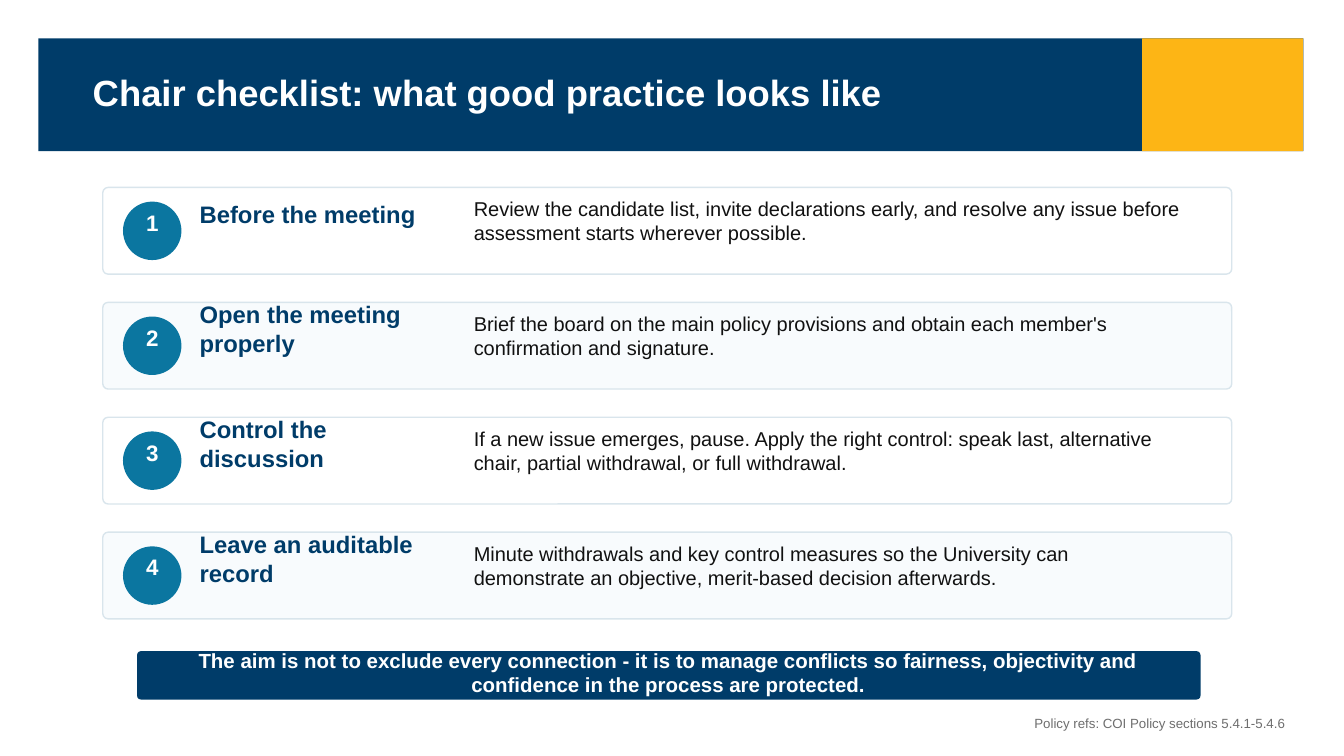
from pptx import Presentation
from pptx.dml.color import RGBColor
from pptx.enum.shapes import MSO_SHAPE
from pptx.enum.text import MSO_ANCHOR, MSO_AUTO_SIZE, PP_ALIGN
from pptx.util import Pt

NAVY = RGBColor(0x00, 0x3C, 0x69)
GOLD = RGBColor(0xFD, 0xB5, 0x15)
TEAL = RGBColor(0x0B, 0x76, 0xA0)
WHITE = RGBColor(0xFF, 0xFF, 0xFF)
PALE = RGBColor(0xF8, 0xFB, 0xFD)
BORDER = RGBColor(0xD9, 0xE5, 0xEC)
INK = RGBColor(0x11, 0x11, 0x11)
GREY = RGBColor(0x6E, 0x6E, 0x6E)

FIRST_ROW_TOP = 133.92
ROW_PITCH = 82.08

STEPS = [
    ("Before the meeting",
     "Review the candidate list, invite declarations early, and resolve any issue "
     "before assessment starts wherever possible."),
    ("Open the meeting properly",
     "Brief the board on the main policy provisions and obtain each member's "
     "confirmation and signature."),
    ("Control the discussion",
     "If a new issue emerges, pause. Apply the right control: speak last, alternative "
     "chair, partial withdrawal, or full withdrawal."),
    ("Leave an auditable record",
     "Minute withdrawals and key control measures so the University can demonstrate "
     "an objective, merit-based decision afterwards."),
]


class ChecklistSlide:
    font_name = "Arial"

    def __init__(self, slide):
        self.slide = slide

    def panel(self, kind, left, top, width, height, fill, border=None, corner=None):
        panel = self.slide.shapes.add_shape(
            kind, Pt(left), Pt(top), Pt(width), Pt(height))
        panel.shadow.inherit = False
        panel.fill.solid()
        panel.fill.fore_color.rgb = fill
        if border is None:
            panel.line.fill.background()
        else:
            panel.line.color.rgb = border
            panel.line.width = Pt(1)
        if corner is not None:
            panel.adjustments[0] = corner

    def style_text(self, frame, wording, size, color, bold, align):
        frame.word_wrap = True
        frame.auto_size = MSO_AUTO_SIZE.NONE
        frame.vertical_anchor = MSO_ANCHOR.MIDDLE
        frame.margin_left = frame.margin_right = 0
        frame.margin_top = frame.margin_bottom = 0
        frame.text = wording
        paragraph = frame.paragraphs[0]
        paragraph.alignment = align
        paragraph.font.name = self.font_name
        paragraph.font.size = Pt(size)
        paragraph.font.bold = bold
        paragraph.font.color.rgb = color

    def title(self, wording, left, top, width, height):
        title = self.slide.shapes.title
        title.left, title.top = Pt(left), Pt(top)
        title.width, title.height = Pt(width), Pt(height)
        self.style_text(title.text_frame, wording, 26, WHITE, True, PP_ALIGN.LEFT)
        title.element.getparent().append(title.element)

    def text(self, wording, left, top, width, height, size, color,
             bold=False, align=PP_ALIGN.LEFT):
        box = self.slide.shapes.add_textbox(Pt(left), Pt(top), Pt(width), Pt(height))
        self.style_text(box.text_frame, wording, size, color, bold, align)

    def step(self, number, heading, advice):
        top = FIRST_ROW_TOP + (number - 1) * ROW_PITCH
        fill = WHITE if number % 2 else PALE
        self.panel(MSO_SHAPE.ROUNDED_RECTANGLE, 73.44, top, 806.4, 61.92,
                   fill, BORDER, 0.06)
        self.panel(MSO_SHAPE.OVAL, 87.84, top + 10.08, 41.76, 41.76, TEAL)
        self.text(str(number), 87.84, top + 19.44, 41.76, 10.8, 16, WHITE,
                  True, PP_ALIGN.CENTER)
        self.text(heading, 142.56, top + 11.52, 183.6, 14.4, 17, NAVY, True)
        self.text(advice, 338.4, top + 11.52, 505.44, 24.48, 14.3, INK)


def main():
    deck = Presentation()
    deck.slide_width, deck.slide_height = Pt(960), Pt(540)
    checklist = ChecklistSlide(deck.slides.add_slide(deck.slide_layouts[5]))

    checklist.panel(MSO_SHAPE.RECTANGLE, 27.36, 27.36, 903.6, 80.64, NAVY)
    checklist.panel(MSO_SHAPE.RECTANGLE, 815.76, 27.36, 115.2, 80.64, GOLD)
    checklist.title("Chair checklist: what good practice looks like",
                    66.24, 51.84, 712.8, 27.36)
    checklist.text("Policy refs: COI Policy sections 5.4.1-5.4.6",
                   43.2, 509.76, 874.8, 12.96, 9.5, GREY, align=PP_ALIGN.RIGHT)

    for number, (heading, advice) in enumerate(STEPS, 1):
        checklist.step(number, heading, advice)

    checklist.panel(MSO_SHAPE.ROUNDED_RECTANGLE, 97.92, 465.12, 759.6, 34.56,
                    NAVY, corner=0.08)
    checklist.text("The aim is not to exclude every connection - it is to manage conflicts "
                   "so fairness, objectivity and confidence in the process are protected.",
                   116.64, 474.48, 721.44, 11.52, 14.6, WHITE, True, PP_ALIGN.CENTER)

    deck.save("out.pptx")


if __name__ == "__main__":
    main()
